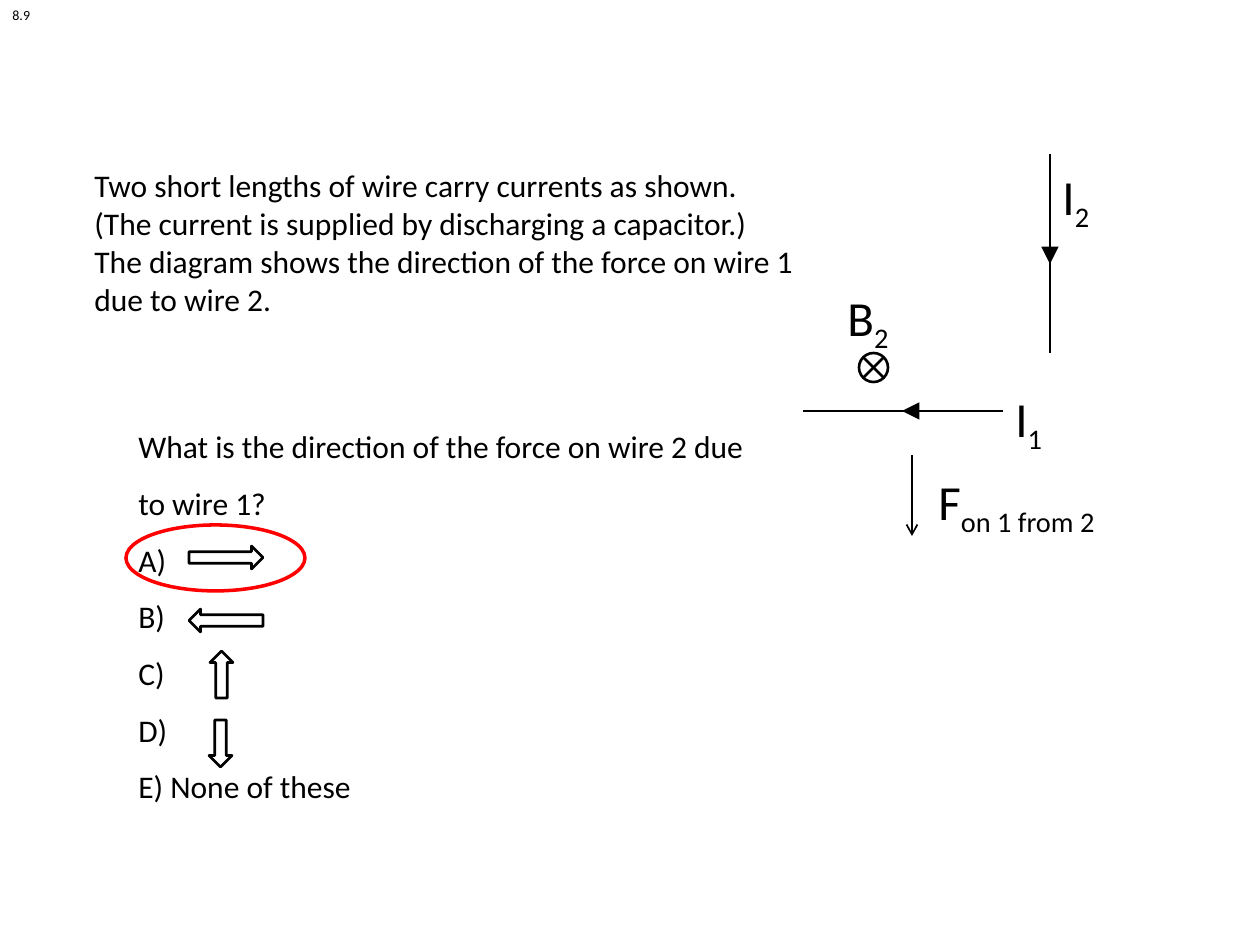
import pptx
import pptx.util
import pptx.dml.color
import pptx.enum.shapes
import pptx.enum.text
import pptx.oxml
import pptx.oxml.ns

BLACK = pptx.dml.color.RGBColor(0, 0, 0)
RED = pptx.dml.color.RGBColor(255, 0, 0)
FORM = pptx.enum.shapes.MSO_SHAPE
SCALE = 914400 / 126


def px(n):
    return pptx.util.Emu(round(n * SCALE))


def add_run(para, text, size=18, color=BLACK, base=None):
    """Add a run; base is the shift from the baseline in percent."""
    run = para.add_run()
    run.text = text
    font = run.font
    font.name, font.size = "Calibri", pptx.util.Pt(size)
    font.color.rgb = color
    if base:
        run._r.get_or_add_rPr().set("baseline", str(base * 1000))


class Board:
    """Holds the current slide and draws each kind of element on it."""

    def __init__(self, slide):
        self.shapes = slide.shapes

    def text(self, x, y, wide, high, paras, size=18, space=None, wrap=True):
        """Each paragraph is a list of (text, baseline shift) pairs."""
        box = self.shapes.add_textbox(px(x), px(y), px(wide), px(high))
        frame = box.text_frame
        frame.word_wrap = wrap
        frame.auto_size = pptx.enum.text.MSO_AUTO_SIZE.SHAPE_TO_FIT_TEXT
        for i, runs in enumerate(paras):
            para = frame.add_paragraph() if i else frame.paragraphs[0]
            para.line_spacing = space
            for words, base in runs:
                add_run(para, words, size=size, base=base)

    def label(self, x, y, wide, name, sub):
        self.text(x, y, wide, 72, [[(name, None), (sub, -25)]], size=28, wrap=False)

    def line(self, x1, y1, x2, y2, head=None, size="med"):
        kind = pptx.enum.shapes.MSO_CONNECTOR.STRAIGHT
        line = self.shapes.add_connector(kind, px(x1), px(y1), px(x2), px(y2))
        line.line.color.rgb = BLACK
        line.line.width = pptx.util.Pt(1)
        if head:
            tail = pptx.oxml.parse_xml(
                f'<a:tailEnd {pptx.oxml.ns.nsdecls("a")} '
                f'type="{head}" w="{size}" len="{size}"/>')
            line.line._get_or_add_ln().append(tail)
        none = pptx.oxml.parse_xml(f'<a:effectLst {pptx.oxml.ns.nsdecls("a")}/>')
        line._element.spPr.append(none)

    def shape(self, form, x, y, wide, high, color=BLACK, width=1.5, turn=0):
        item = self.shapes.add_shape(form, px(x), px(y), px(wide), px(high))
        item.shadow.inherit = False
        item.fill.background()
        item.line.color.rgb = color
        item.line.width = pptx.util.Pt(width)
        item.rotation = turn


def main():
    deck = pptx.Presentation()
    deck.slide_width, deck.slide_height = px(1260), px(945)
    board = Board(deck.slides.add_slide(deck.slide_layouts[6]))

    # Wires, with the way of the current
    board.line(803, 411, 1003, 411)
    board.line(1050, 353, 1050, 154)
    board.label(1003, 382, 58, "I", "1")
    board.label(1050, 160, 58, "I", "2")
    board.line(1050, 154, 1050, 264, head="triangle", size="lg")
    board.line(1003, 411, 902, 411, head="triangle", size="lg")

    # Field and force at wire 1
    board.shape(FORM.FLOWCHART_SUMMING_JUNCTION, 859, 353, 29, 29)
    board.label(835, 281, 77, "B", "2")
    board.line(912, 455, 912, 536, head="arrow")
    board.label(926, 465, 222, "F", "on 1 from 2")

    # Question
    setup = ["Two short lengths of wire carry currents as shown.",
             "(The current is supplied by discharging a capacitor.)",
             "The diagram shows the direction of the force on wire 1 due to wire 2."]
    board.text(82, 160, 777, 165, [[(words, None)] for words in setup])
    ask = ["What is the direction of the force on wire 2 due to wire 1?",
           "A)", "B)", "C)", "D)", "E) None of these"]
    board.text(126, 402, 640, 407, [[(words, None)] for words in ask], space=1.5)

    # Answer arrows A to D
    for x, y, wide, turn in [(189, 546, 74, 0), (189, 609, 74, 180),
                             (198, 663, 47, 270), (197, 732, 47, 90)]:
        board.shape(FORM.RIGHT_ARROW, x, y, wide, 23, turn=turn)
    board.shape(FORM.OVAL, 126, 525, 179, 66, color=RED, width=2)

    board.text(0, 0, 43, 30, [[("8.9", None)]], size=8, wrap=False)
    deck.save("out.pptx")


if __name__ == "__main__":
    main()
